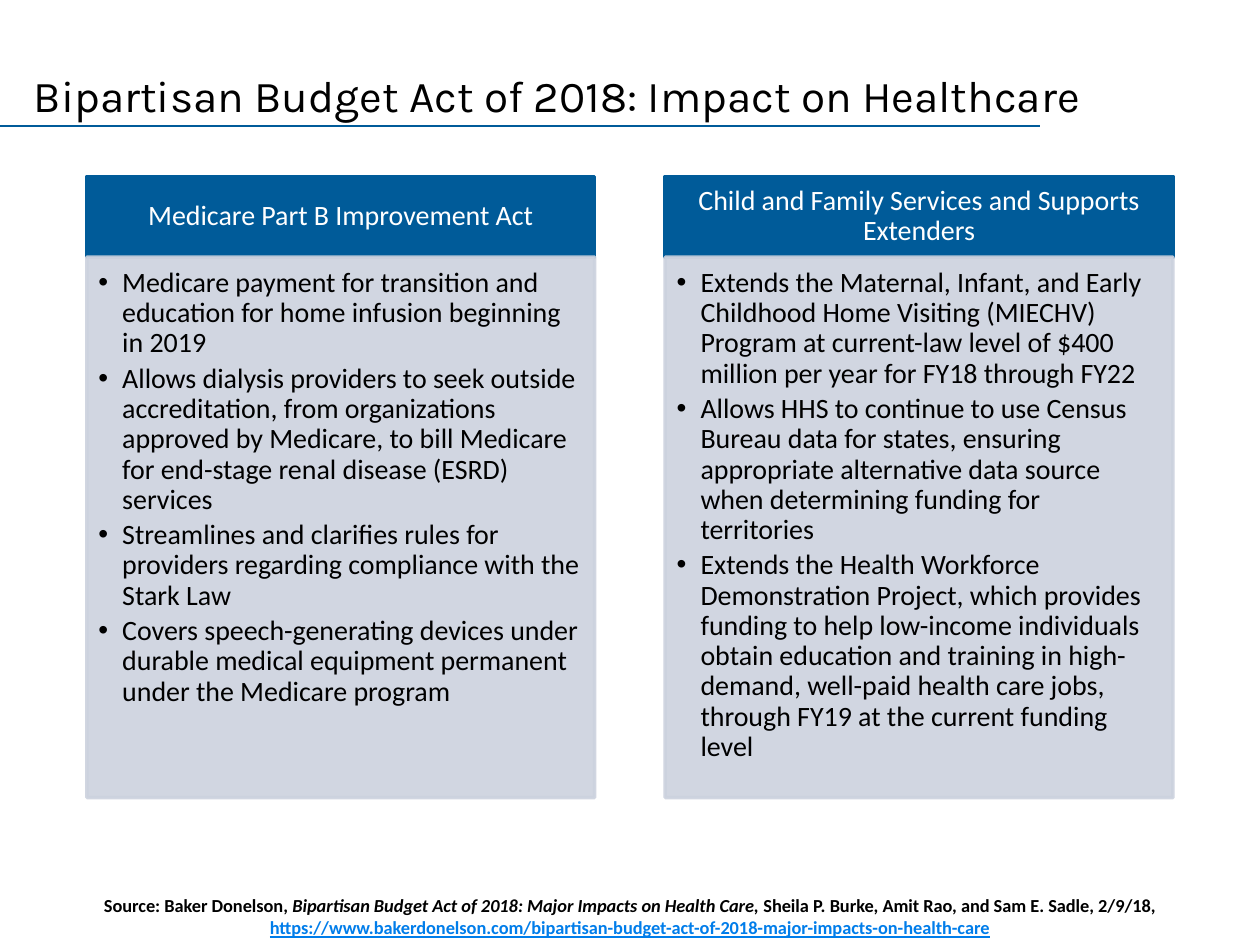
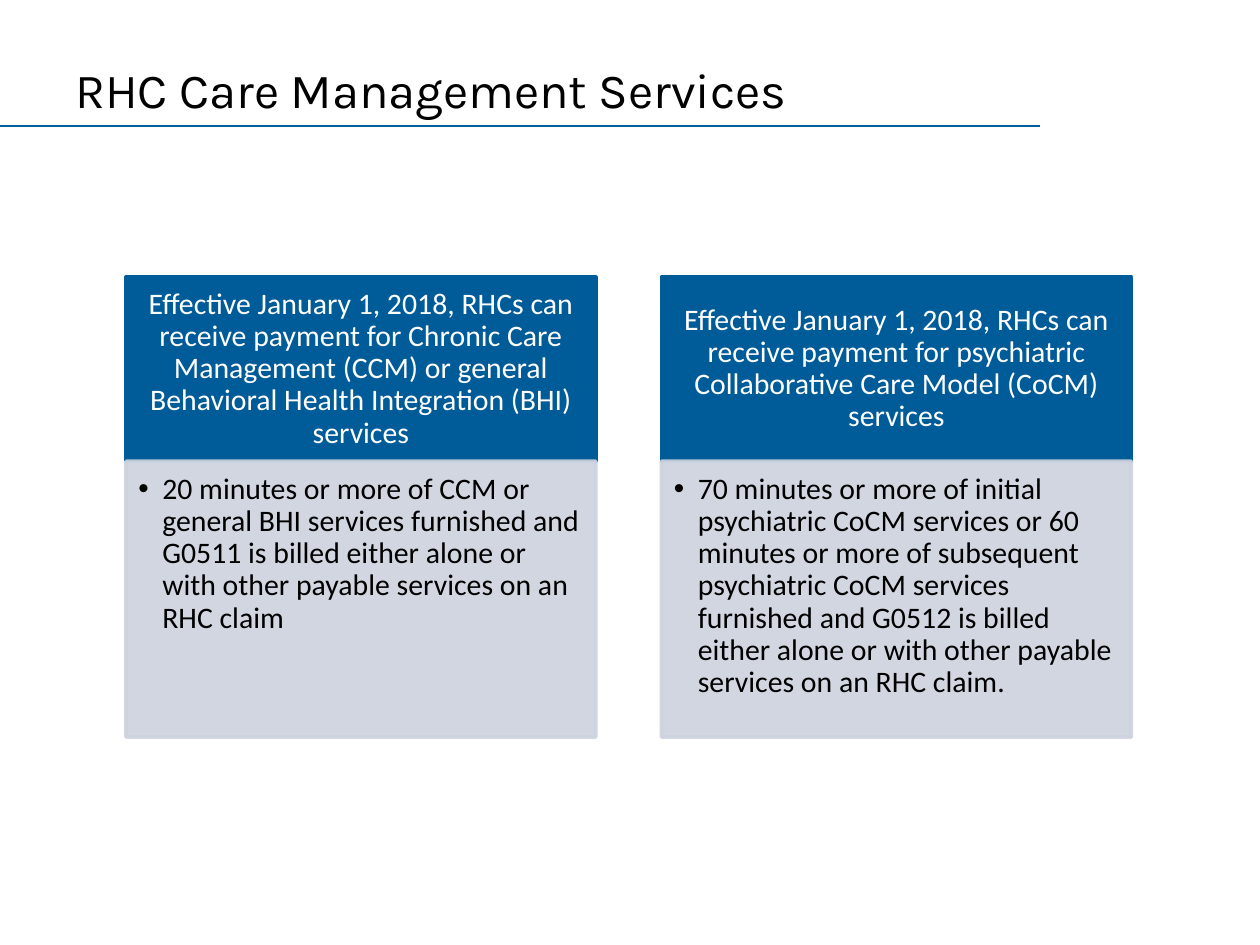
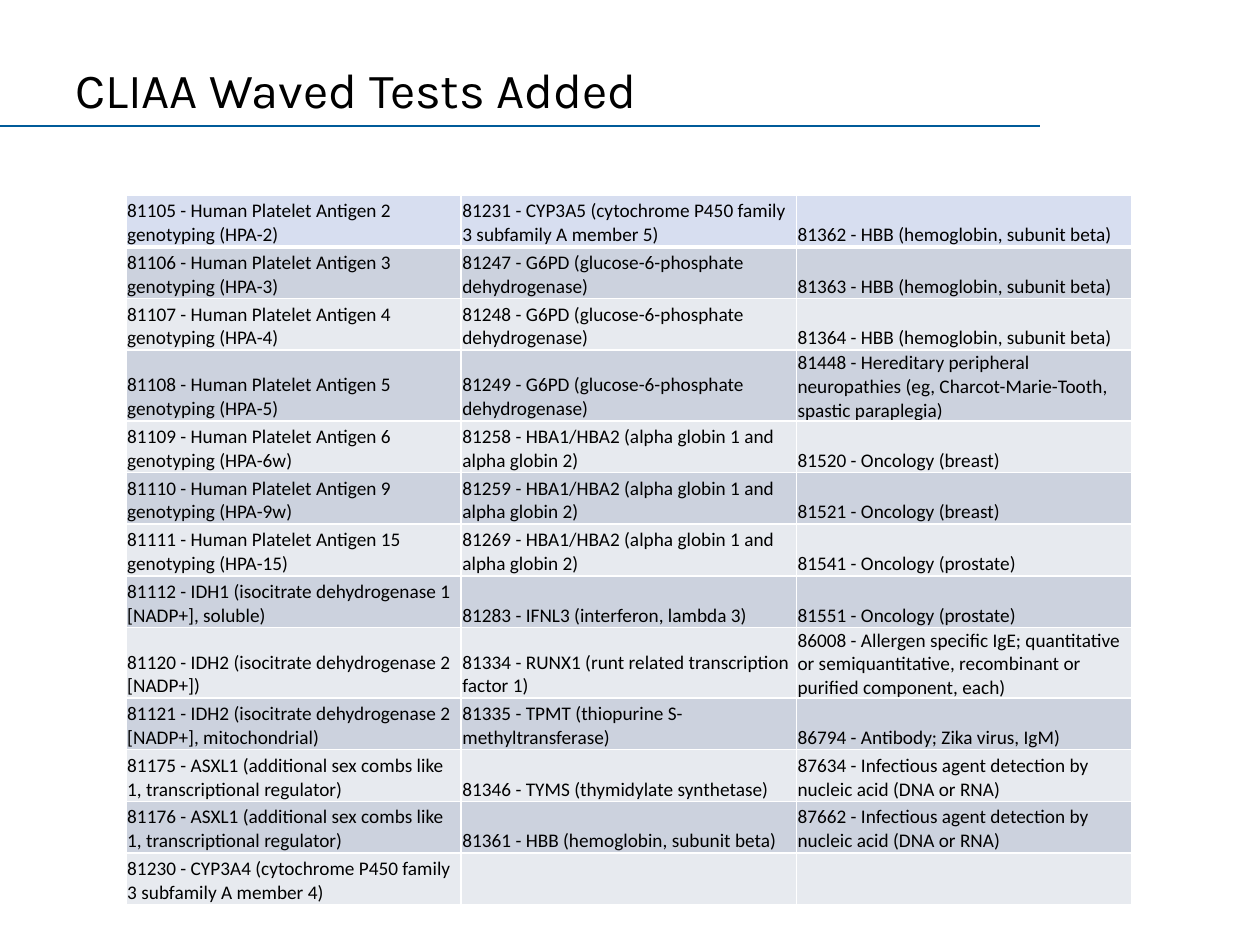
import pptx
import pptx.dml.color
import pptx.enum.shapes
import pptx.enum.text
import pptx.oxml
import pptx.util
from lxml import etree

Inches = pptx.util.Inches
Pt = pptx.util.Pt
ANCHOR = pptx.enum.text.MSO_ANCHOR
ALIGN = pptx.enum.text.PP_ALIGN
qn = pptx.oxml.ns.qn

BLUE, PALE, BLACK, WHITE = "005B99", "CCD2DE", "000000", "FFFFFF"
LINK, HEAD_ROW, LIGHT_ROW = "007DEA", "D7DEF0", "E7EAEF"


def colour(hex_value):
    return pptx.dml.color.RGBColor.from_string(hex_value)


def write(para, text, size=16, font="Calibri", color=BLACK, **style):
    """Add a run of text; style holds bold, italic and underline."""
    span = para.add_run()
    span.text = text
    span.font.size = Pt(size)
    span.font.name = font
    span.font.color.rgb = colour(color)
    for name, value in style.items():
        setattr(span.font, name, value)


deck = pptx.Presentation()
deck.slide_width, deck.slide_height = Inches(10), Inches(7.5)

# Titles and the rule under them
titles = [
    ("Bipartisan Budget Act of 2018: Impact on Healthcare", 25.2, (0.17, 0.5, 9.15, 0.5)),
    ("RHC Care Management Services", 28, (0.5, 0.08, 9, 1.25)),
    ("CLIAA Waved Tests Added", 28, (0.5, 0.08, 9, 1.25)),
]
pages = []
for title, size, place in titles:
    page = deck.slides.add_slide(deck.slide_layouts[6])
    pages.append(page)
    rule = page.shapes.add_connector(
        pptx.enum.shapes.MSO_CONNECTOR.STRAIGHT, 0, Inches(1), Inches(8.25), Inches(1))
    rule.line.color.rgb = colour(BLUE)
    rule.line.width = Pt(0.75)
    etree.SubElement(rule._element.spPr, qn("a:effectLst"))
    box = page.shapes.add_textbox(*map(Inches, place))
    box.text_frame.word_wrap = True
    box.text_frame.vertical_anchor = ANCHOR.MIDDLE
    write(box.text_frame.paragraphs[0], title, size, "Karla")
budget_page, care_page, tests_page = pages

# Two columns of a heading over a bulleted panel
budget_columns = [
    ("Medicare Part B Improvement Act", [
        "Medicare payment for transition and education for home infusion beginning in 2019",
        "Allows dialysis providers to seek outside accreditation, from organizations approved "
        "by Medicare, to bill Medicare for end-stage renal disease (ESRD) services",
        "Streamlines and clarifies rules for providers regarding compliance with the Stark Law",
        "Covers speech-generating devices under durable medical equipment permanent under "
        "the Medicare program",
    ]),
    ("Child and Family Services and Supports Extenders", [
        "Extends the Maternal, Infant, and Early Childhood Home Visiting (MIECHV) Program at "
        "current-law level of $400 million per year for FY18 through FY22",
        "Allows HHS to continue to use Census Bureau data for states, ensuring appropriate "
        "alternative data source when determining funding for territories",
        "Extends the Health Workforce Demonstration Project, which provides funding to help "
        "low-income individuals obtain education and training in high-demand, well-paid "
        "health care jobs, through FY19 at the current funding level",
    ]),
]
care_columns = [
    ("Effective January 1, 2018, RHCs can receive payment for Chronic Care Management (CCM) "
     "or general Behavioral Health Integration (BHI) services", [
         "20 minutes or more of CCM or general BHI services furnished and G0511 is billed "
         "either alone or with other payable services on an RHC claim",
     ]),
    ("Effective January 1, 2018, RHCs can receive payment for psychiatric Collaborative Care "
     "Model (CoCM) services", [
         "70 minutes or more of initial psychiatric CoCM services or 60 minutes or more of "
         "subsequent psychiatric CoCM services furnished and G0512 is billed either alone or "
         "with other payable services on an RHC claim.",
     ]),
]
# page, columns, left, step, top, width, heading height, panel height, size, insets
layouts = [
    (budget_page, budget_columns, 0.69, 4.59, 1.4, 4.03, 0.64, 4.29, 16,
     (0.12, 0.07, 0.12, 0.07), (0.09, 0.09, 0.12, 0.14)),
    (care_page, care_columns, 1, 4.25, 2.2, 3.73, 1.46, 2.19, 17,
     (0.13, 0.08, 0.13, 0.08), (0.1, 0.1, 0.13, 0.15)),
]
for (page, columns, left, step, top, width, head_height, panel_height, size,
     head_insets, panel_insets) in layouts:
    for index, (heading, bullets) in enumerate(columns):
        parts = [
            (top, head_height, BLUE, WHITE, head_insets, [heading]),
            (top + head_height, panel_height, PALE, BLACK, panel_insets, bullets),
        ]
        for part_top, height, fill, text_color, insets, lines in parts:
            is_panel = fill == PALE
            box = page.shapes.add_shape(
                pptx.enum.shapes.MSO_SHAPE.RECTANGLE,
                *map(Inches, (left + index * step, part_top, width, height)))
            box.shadow.inherit = False
            box.fill.solid()
            box.fill.fore_color.rgb = colour(fill)
            box.line.color.rgb = colour(fill)
            box.line.width = Pt(2)
            if is_panel:
                for tint in box._element.spPr.iter(qn("a:srgbClr")):
                    etree.SubElement(tint, qn("a:alpha"), val="90000")
            frame = box.text_frame
            frame.word_wrap = True
            frame.vertical_anchor = ANCHOR.TOP if is_panel else ANCHOR.MIDDLE
            (frame.margin_left, frame.margin_top,
             frame.margin_right, frame.margin_bottom) = map(Inches, insets)
            for number, line in enumerate(lines):
                para = frame.paragraphs[0] if number == 0 else frame.add_paragraph()
                para.alignment = ALIGN.LEFT if is_panel else ALIGN.CENTER
                para.line_spacing = 0.9
                if is_panel:
                    para.space_after = Pt(3)
                    properties = para._p.get_or_add_pPr()
                    properties.set("marL", str(Inches(0.19)))
                    properties.set("indent", str(-Inches(0.19)))
                    etree.SubElement(properties, qn("a:buFont"), typeface="Arial")
                    etree.SubElement(properties, qn("a:buChar"), char="•")
                write(para, line, size, color=text_color)

# Source line
box = budget_page.shapes.add_textbox(0, Inches(7.05), Inches(10), Inches(0.45))
box.text_frame.word_wrap = True
para = box.text_frame.paragraphs[0]
para.alignment = ALIGN.CENTER
write(para, "Source: Baker Donelson, ", 10.5, bold=True)
write(para, "Bipartisan Budget Act of 2018: Major Impacts on Health Care, ", 10.5,
      bold=True, italic=True)
write(para, "Sheila P. Burke, Amit Rao, and Sam E. Sadle, 2/9/18, ", 10.5, bold=True)
write(para, "https://www.bakerdonelson.com/"
      "bipartisan-budget-act-of-2018-major-impacts-on-health-care",
      10.5, color=LINK, bold=True, underline=True)

# Table of tests
tests = [
    ("81105 - Human Platelet Antigen 2 genotyping (HPA-2)",
     "81231 - CYP3A5 (cytochrome P450 family 3 subfamily A member 5)",
     "81362 - HBB (hemoglobin, subunit beta)"),
    ("81106 - Human Platelet Antigen 3 genotyping (HPA-3)",
     "81247 - G6PD (glucose-6-phosphate dehydrogenase)",
     "81363 - HBB (hemoglobin, subunit beta)"),
    ("81107 - Human Platelet Antigen 4 genotyping (HPA-4)",
     "81248 - G6PD (glucose-6-phosphate dehydrogenase)",
     "81364 - HBB (hemoglobin, subunit beta)"),
    ("81108 - Human Platelet Antigen 5 genotyping (HPA-5)",
     "81249 - G6PD (glucose-6-phosphate dehydrogenase)",
     "81448 - Hereditary peripheral neuropathies (eg, Charcot-Marie-Tooth, spastic paraplegia)"),
    ("81109 - Human Platelet Antigen 6 genotyping (HPA-6w)",
     "81258 - HBA1/HBA2 (alpha globin 1 and alpha globin 2)",
     "81520 - Oncology (breast)"),
    ("81110 - Human Platelet Antigen 9 genotyping (HPA-9w)",
     "81259 - HBA1/HBA2 (alpha globin 1 and alpha globin 2)",
     "81521 - Oncology (breast)"),
    ("81111 - Human Platelet Antigen 15 genotyping (HPA-15)",
     "81269 - HBA1/HBA2 (alpha globin 1 and alpha globin 2)",
     "81541 - Oncology (prostate)"),
    ("81112 - IDH1 (isocitrate dehydrogenase 1 [NADP+], soluble)",
     "81283 - IFNL3 (interferon, lambda 3)",
     "81551 - Oncology (prostate)"),
    ("81120 - IDH2 (isocitrate dehydrogenase 2 [NADP+])",
     "81334 - RUNX1 (runt related transcription factor 1)",
     "86008 - Allergen specific IgE; quantitative or semiquantitative, recombinant or "
     "purified component, each)"),
    ("81121 - IDH2 (isocitrate dehydrogenase 2 [NADP+], mitochondrial)",
     "81335 - TPMT (thiopurine S-methyltransferase)",
     "86794 - Antibody; Zika virus, IgM)"),
    ("81175 - ASXL1 (additional sex combs like 1, transcriptional regulator)",
     "81346 - TYMS (thymidylate synthetase)",
     "87634 - Infectious agent detection by nucleic acid (DNA or RNA)"),
    ("81176 - ASXL1 (additional sex combs like 1, transcriptional regulator)",
     "81361 - HBB (hemoglobin, subunit beta)",
     "87662 - Infectious agent detection by nucleic acid (DNA or RNA)"),
    ("81230 - CYP3A4 (cytochrome P450 family 3 subfamily A member 4)", "", ""),
]
table = tests_page.shapes.add_table(
    len(tests), 3, Inches(1), Inches(1.55), Inches(3 * 2.66), Inches(len(tests) * 0.41)).table
table.first_row = table.horz_banding = False
for row, names in enumerate(tests):
    row_fill = HEAD_ROW if row == 0 else PALE if row % 2 else LIGHT_ROW
    for column, name in enumerate(names):
        cell = table.cell(row, column)
        cell.fill.solid()
        cell.fill.fore_color.rgb = colour(row_fill)
        cell.vertical_anchor = ANCHOR.BOTTOM
        cell.margin_left = cell.margin_right = cell.margin_top = Inches(0.01)
        cell.margin_bottom = 0
        if name:
            write(cell.text_frame.paragraphs[0], name, 11)
        for order, side in enumerate(("lnL", "lnR", "lnT", "lnB")):
            weight = 3 if row == 0 and side == "lnB" else 1
            border = etree.Element(qn("a:" + side), w=str(Pt(weight)))
            paint = etree.SubElement(border, qn("a:solidFill"))
            etree.SubElement(paint, qn("a:srgbClr"), val=WHITE)
            cell._tc.get_or_add_tcPr().insert(order, border)

deck.save("out.pptx")
